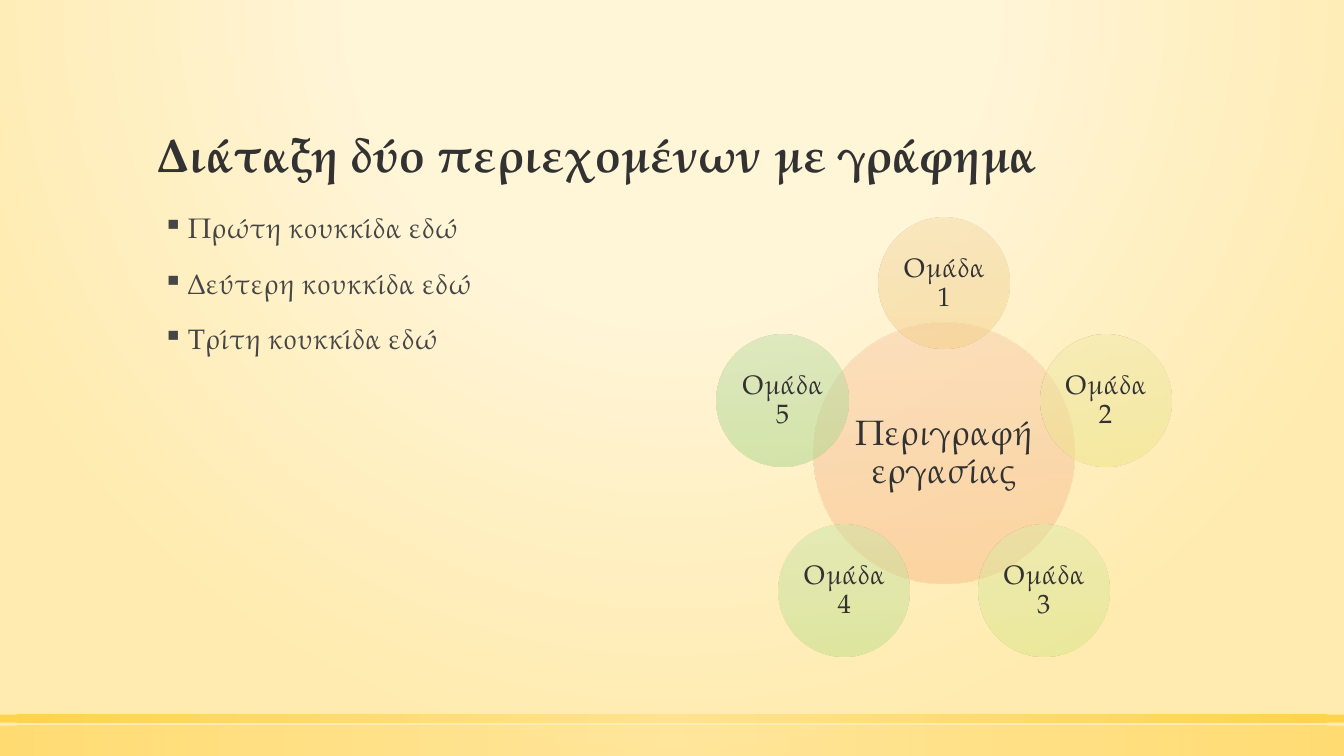
import math

import pptx
import pptx.dml.color
import pptx.enum.shapes
import pptx.enum.text
import pptx.oxml
import pptx.oxml.ns
import pptx.util

SHAPES = pptx.enum.shapes.MSO_SHAPE
ALIGN = pptx.enum.text.PP_ALIGN
ANCHOR = pptx.enum.text.MSO_ANCHOR
FONT_NAME = "TeX Gyre Pagella"
WIDTH, HEIGHT = pptx.util.Inches(13.333), pptx.util.Inches(7.5)

COLOURS = {
    "title": "323232",
    "body": "464646",
    "cream": "FFF5D7",
    "sand": "FFEBAF",
    "light gold": "FFE186",
    "gold": "FFCD36",
}
CENTRE_COLOURS = ("FACDA9", "F8C39A", "FBBB87")
GROUP_COLOURS = [
    ("F6DBA8", "F3D49A", "F5D187"),
    ("F1EAA8", "EDE59A", "EEE587"),
    ("E0EBA8", "DAE79A", "D8E787"),
    ("CDE6A8", "C5E19A", "BEE088"),
    ("BFE0A9", "B4DA9B", "A9D889"),
]
BULLETS = ["Πρώτη κουκκίδα εδώ", "Δεύτερη κουκκίδα εδώ", "Τρίτη κουκκίδα εδώ"]

LINEAR = '<a:lin ang="5400000" scaled="0"/>'


def circular(left, top, right, bottom):
    return (
        '<a:path path="circle"><a:fillToRect '
        f'l="{left * 1000}" t="{top * 1000}" r="{right * 1000}" b="{bottom * 1000}"/></a:path>'
    )


class SlideBuilder:
    def __init__(self, presentation):
        self.slide = presentation.slides.add_slide(presentation.slide_layouts[6])

    def area(self, left, top, width, height):
        return [
            int(share * side / 100)
            for share, side in zip((left, top, width, height), (WIDTH, HEIGHT) * 2)
        ]

    def gradient(self, fill, properties, stops, direction):
        fill.solid()
        stop_xml = "".join(
            f'<a:gs pos="{position * 1000}"><a:srgbClr val="{colour}">'
            f'<a:alpha val="{opacity * 1000}"/></a:srgbClr></a:gs>'
            for position, colour, opacity in stops
        )
        solid = properties.find(pptx.oxml.ns.qn("a:solidFill"))
        properties.replace(solid, pptx.oxml.parse_xml(
            f'<a:gradFill {pptx.oxml.ns.nsdecls("a")} rotWithShape="1">'
            f"<a:gsLst>{stop_xml}</a:gsLst>{direction}</a:gradFill>"
        ))

    def background(self, stops, direction):
        background = self.slide.background
        background.fill.solid()
        properties = self.slide.element.find(".//" + pptx.oxml.ns.qn("p:bgPr"))
        self.gradient(background.fill, properties, stops, direction)

    def shape(self, kind, area, stops, direction):
        shape = self.slide.shapes.add_shape(kind, *area)
        shape.shadow.inherit = False
        shape.line.fill.background()
        self.gradient(shape.fill, shape.element.spPr, stops, direction)
        return shape

    def fill_frame(self, frame, lines, frame_format, paragraph_format, size, colour, bold=False):
        for name, value in {"word_wrap": True, **frame_format}.items():
            setattr(frame, name, value)
        for index, line in enumerate(lines):
            paragraph = frame.add_paragraph() if index else frame.paragraphs[0]
            for name, value in {"line_spacing": 0.9, **paragraph_format}.items():
                setattr(paragraph, name, value)
            run = paragraph.add_run()
            run.text = line
            font_format = {"name": FONT_NAME, "size": pptx.util.Pt(size), "bold": bold}
            for name, value in font_format.items():
                setattr(run.font, name, value)
            run.font.color.rgb = pptx.dml.color.RGBColor.from_string(COLOURS[colour])

    def text(self, area, lines, frame_format, paragraph_format, size, colour, bold=False):
        frame = self.slide.shapes.add_textbox(*area).text_frame
        self.fill_frame(frame, lines, frame_format, paragraph_format, size, colour, bold)
        return frame

    def bullets(self, area, lines):
        spacing = {"space_before": pptx.util.Pt(18)}
        frame = self.text(area, lines, {}, spacing, 20, "body")
        for paragraph in frame.paragraphs:
            properties = paragraph._p.get_or_add_pPr()
            properties.set("marL", str(pptx.util.Inches(0.3)))
            properties.set("indent", str(pptx.util.Inches(-0.25)))
            properties.append(pptx.oxml.parse_xml(
                f'<a:buChar {pptx.oxml.ns.nsdecls("a")} char="▪"/>'
            ))

    def bar(self, top, height, opacity):
        stops = [(0, COLOURS["light gold"], opacity), (100, COLOURS["gold"], opacity)]
        area = self.area(0, top, 100, height)
        self.shape(SHAPES.RECTANGLE, area, stops, circular(50, 50, 50, 50))

    def circle(self, centre_x, centre_y, diameter, label, size, colours):
        side = int(diameter * HEIGHT / 100)
        left, top = int(centre_x - side / 2), int(centre_y - side / 2)
        stops = [(position, colour, 50) for position, colour in zip((0, 50, 100), colours)]
        shape = self.shape(SHAPES.OVAL, (left, top, side, side), stops, LINEAR)
        margins = ("margin_left", "margin_top", "margin_right", "margin_bottom")
        frame_format = dict.fromkeys(margins, pptx.util.Inches(0.03))
        frame_format["vertical_anchor"] = ANCHOR.MIDDLE
        self.fill_frame(shape.text_frame, [label], frame_format,
                        {"alignment": ALIGN.CENTER}, size, "title")

    def radial_diagram(self, centre_x, centre_y, radius):
        middle_x, middle_y = centre_x * WIDTH / 100, centre_y * HEIGHT / 100
        reach = radius * HEIGHT / 100
        self.circle(middle_x, middle_y, 34.53, "Περιγραφή εργασίας", 25, CENTRE_COLOURS)
        for index, colours in enumerate(GROUP_COLOURS):
            angle = math.tau * index / len(GROUP_COLOURS)
            self.circle(middle_x + reach * math.sin(angle), middle_y - reach * math.cos(angle),
                        17.33, f"Ομάδα {index + 1}", 19, colours)


def main():
    presentation = pptx.Presentation()
    presentation.slide_width, presentation.slide_height = WIDTH, HEIGHT
    builder = SlideBuilder(presentation)
    builder.background(
        [(0, COLOURS["cream"], 59), (40, COLOURS["cream"], 66), (100, COLOURS["sand"], 100)],
        circular(50, -80, 50, 180),
    )
    builder.bar(96, 4, 50)
    builder.bar(94.53, 1.07, 80)
    builder.text(builder.area(11, 6.8, 78, 18), ["Διάταξη δύο περιεχομένων με γράφημα"],
                 {"vertical_anchor": ANCHOR.BOTTOM}, {}, 34, "title", bold=True)
    builder.bullets(builder.area(11, 27.73, 37.5, 60.13), BULLETS)
    builder.radial_diagram(70.24, 59.93, 22.47)
    presentation.save("out.pptx")


if __name__ == "__main__":
    main()
